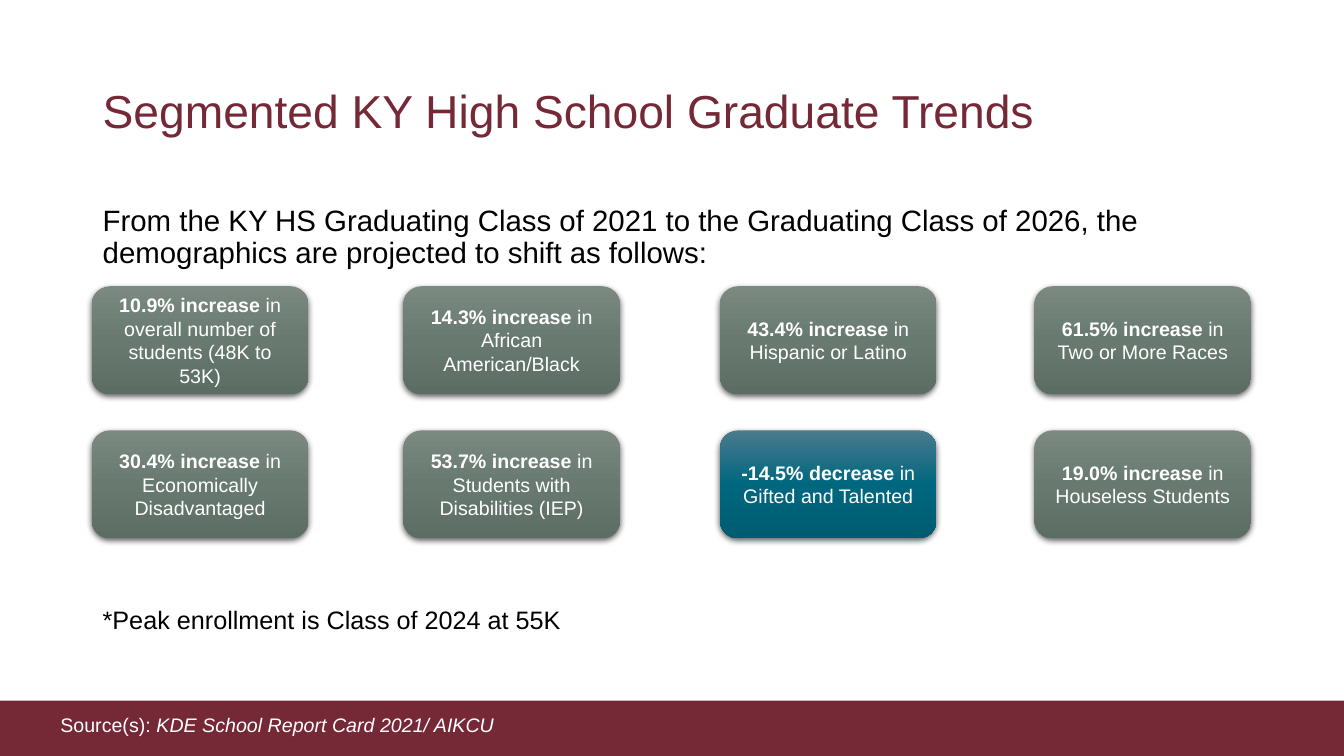
from pptx import Presentation
from pptx.dml.color import RGBColor
from pptx.enum.shapes import MSO_SHAPE
from pptx.enum.text import MSO_ANCHOR, PP_ALIGN
from pptx.oxml import parse_xml
from pptx.oxml.ns import nsdecls
from pptx.util import Inches, Pt

RECT, ROUNDED = MSO_SHAPE.RECTANGLE, MSO_SHAPE.ROUNDED_RECTANGLE
MIDDLE, TOP = MSO_ANCHOR.MIDDLE, MSO_ANCHOR.TOP
CENTER, LEFT = PP_ALIGN.CENTER, PP_ALIGN.LEFT
MAROON, BLACK, WHITE = "752836", "000000", "FFFFFF"
GREEN_STOPS = ("7B8981", "687A70", "5C6D63")
BLUE_STOPS = ("4B7A8D", "00677F", "005C71")


def rgb(value):
    return RGBColor.from_string(value)


def write(sp, runs, size, color, anchor=TOP, align=LEFT, spacing=1.0):
    """Fill a shape with one paragraph of (text, bold, italic) runs."""
    tf = sp.text_frame
    tf.word_wrap = True
    tf.vertical_anchor = anchor
    p = tf.paragraphs[0]
    p.alignment = align
    p.line_spacing = spacing
    for text, bold, italic in runs:
        r = p.add_run()
        r.text = text
        r.font.name = "Arial"
        r.font.size = Pt(size)
        r.font.bold = bold
        r.font.italic = italic
        r.font.color.rgb = rgb(color)


prs = Presentation()
prs.slide_width, prs.slide_height = Inches(13.33), Inches(7.5)
s = prs.slides.add_slide(prs.slide_layouts[6])

# Footer band
band = s.shapes.add_shape(RECT, 0, Inches(6.95), prs.slide_width, Inches(0.55))
band.shadow.inherit = False
band.fill.solid()
band.fill.fore_color.rgb = rgb(MAROON)
band.line.fill.background()

# Title, introduction, footnote and source
title = s.shapes.add_textbox(Inches(0.92), Inches(0.4), Inches(11.5), Inches(1.45))
write(title, [("Segmented KY High School Graduate Trends", False, False)],
      33, MAROON, anchor=MIDDLE, spacing=0.9)

intro = s.shapes.add_textbox(Inches(0.92), Inches(2), Inches(11.5), Inches(0.89))
write(intro, [("From the KY HS Graduating Class of 2021 to the Graduating Class of 2026, "
               "the demographics are projected to shift as follows:", False, False)],
      21, BLACK, spacing=0.9)

footnote = s.shapes.add_textbox(Inches(0.92), Inches(5.95), Inches(8.97), Inches(0.4))
write(footnote, [("*Peak enrollment is Class of 2024 at 55K", False, False)], 18, BLACK)

source = s.shapes.add_textbox(Inches(0.5), Inches(7.02), Inches(10.93), Inches(0.34))
write(source, [("Source(s): ", False, False),
               ("KDE School Report Card 2021/ AIKCU", False, True)], 14, WHITE)

# Trend cards: two rows of four
card_lefts = (0.91, 4, 7.14, 10.26)
card_rows = [
    (2.84, [("10.9% increase", "overall number of students (48K to 53K)"),
            ("14.3% increase", "African American/Black"),
            ("43.4% increase", "Hispanic or Latino"),
            ("61.5% increase", "Two or More Races")]),
    (4.27, [("30.4% increase", "Economically Disadvantaged"),
            ("53.7% increase", "Students with Disabilities (IEP)"),
            ("-14.5% decrease", "Gifted and Talented"),
            ("19.0% increase", "Houseless Students")]),
]
for top, cards in card_rows:
    for left, (change, group) in zip(card_lefts, cards):
        card = s.shapes.add_shape(ROUNDED, Inches(left), Inches(top), Inches(2.15), Inches(1.07))
        card.line.fill.background()
        write(card, [(change, True, False), (f" in {group}", False, False)],
              14, WHITE, anchor=MIDDLE, align=CENTER)

        # Three-stop vertical gradient, placed right after the geometry
        colors = BLUE_STOPS if "decrease" in change else GREEN_STOPS
        stops = "".join(f'<a:gs pos="{i * 50000}"><a:srgbClr val="{c}"/></a:gs>'
                        for i, c in enumerate(colors))
        spPr = card._element.spPr
        spPr.insert(2, parse_xml(
            f'<a:gradFill {nsdecls("a")} rotWithShape="1"><a:gsLst>{stops}</a:gsLst>'
            '<a:lin ang="5400000" scaled="0"/></a:gradFill>'))

        # Soft shadow below the card
        spPr.append(parse_xml(
            f'<a:effectLst {nsdecls("a")}><a:outerShdw blurRad="{Pt(4.5)}" dist="{Pt(1.5)}" '
            'dir="5400000" algn="ctr" rotWithShape="0"><a:srgbClr val="000000">'
            '<a:alpha val="63000"/></a:srgbClr></a:outerShdw></a:effectLst>'))

prs.save("out.pptx")
